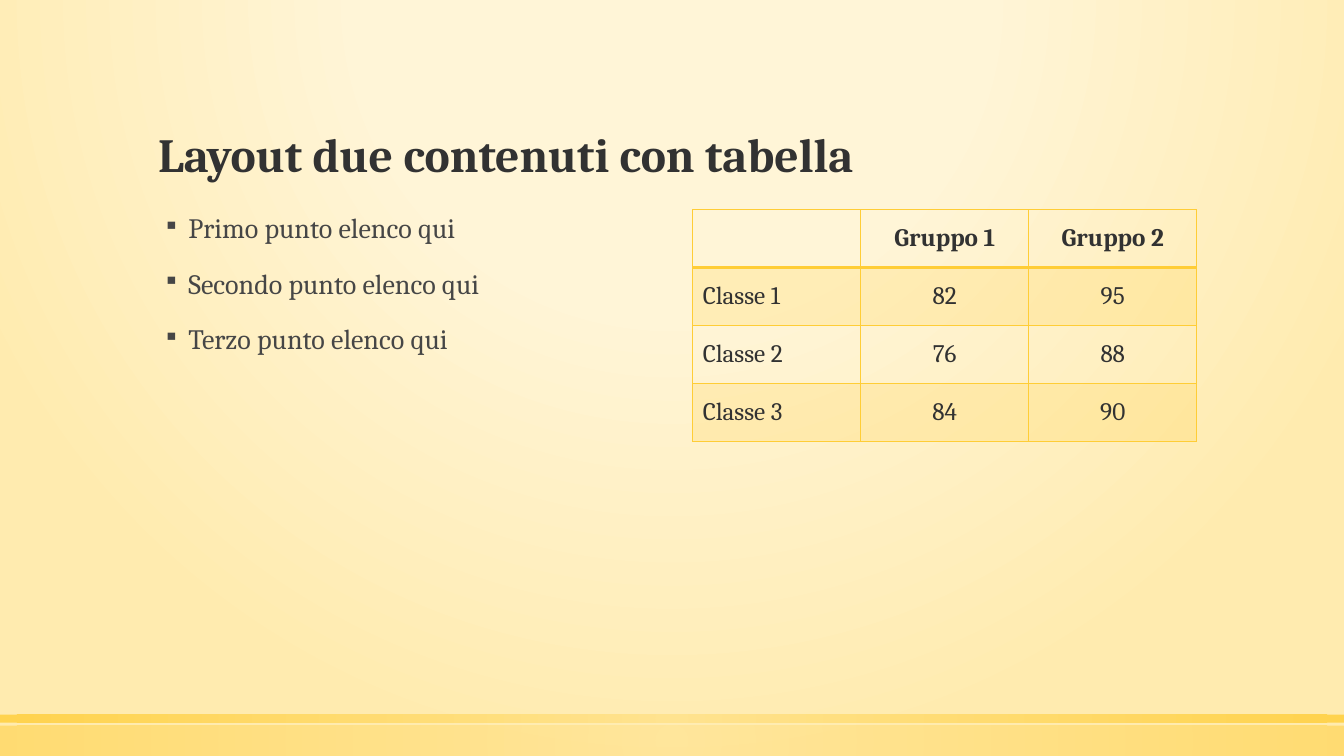
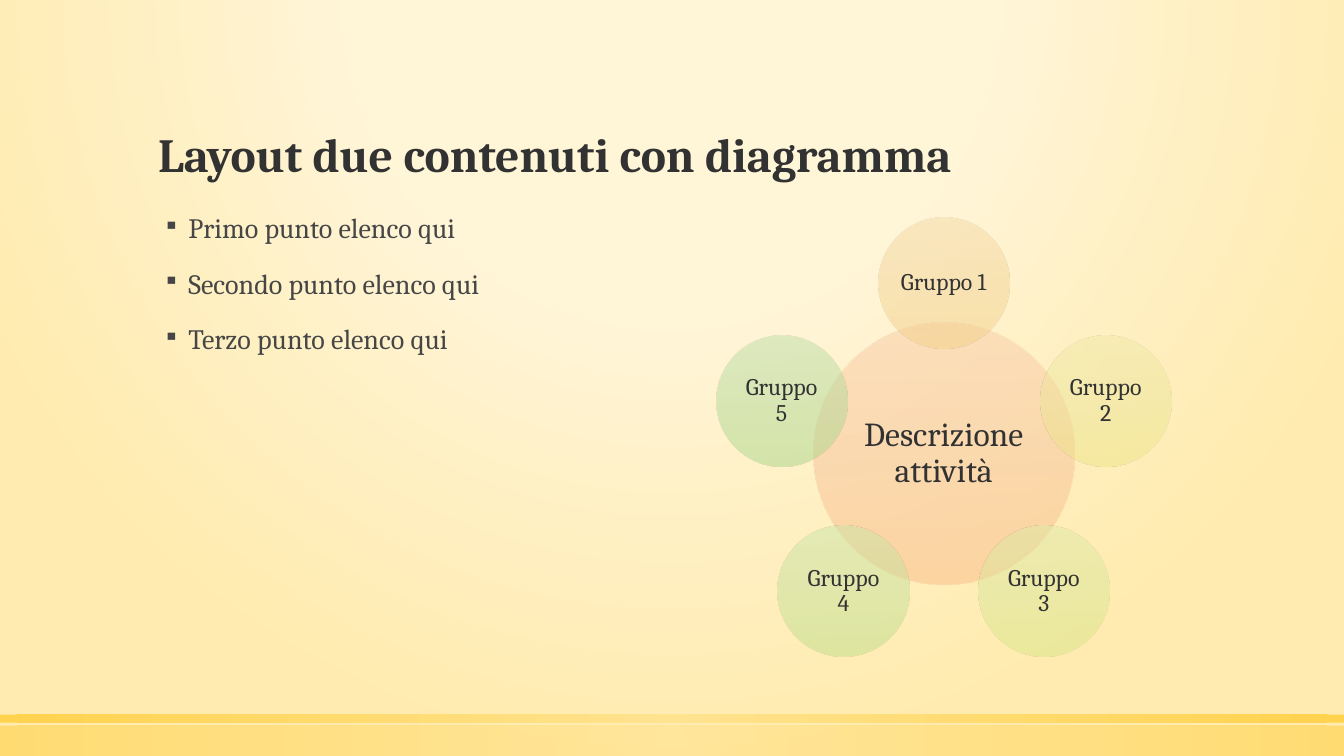
import math

import lxml.etree
import pptx
import pptx.dml.color
import pptx.enum.shapes
import pptx.enum.text
import pptx.oxml
import pptx.oxml.ns
import pptx.util

Inches = pptx.util.Inches
Pt = pptx.util.Pt
qn = pptx.oxml.ns.qn
ALIGN = pptx.enum.text.PP_ALIGN
ANCHOR = pptx.enum.text.MSO_ANCHOR
SHAPE = pptx.enum.shapes.MSO_SHAPE

# Shared style
FONT = "Cambria"
DARK, GREY, GOLD, LIGHT_GOLD = "323232", "464646", "FFCD36", "FFE186"
SLIDE_W, SLIDE_H = 13.33, 7.5
LEFT, BODY_TOP, COLUMN_W = 1.47, 2.08, 5
BULLETS = ["Primo punto elenco qui", "Secondo punto elenco qui", "Terzo punto elenco qui"]

# Slide content
TABLE_ROWS = [
    ["", "Gruppo 1", "Gruppo 2"],
    ["Classe 1", "82", "95"],
    ["Classe 2", "76", "88"],
    ["Classe 3", "84", "90"],
]
HUB_COLORS = ["FACDA9", "F8C39A", "FBBB87"]
GROUP_COLORS = [
    ["F6DBA8", "F3D49A", "F5D187"],
    ["F1EAA8", "EDE59A", "EEE587"],
    ["E0EBA8", "DAE79A", "D8E787"],
    ["CDE6A8", "C5E19A", "BEE088"],
    ["BFE0A9", "B4DA9B", "A9D889"],
]


def rgb(color):
    return pptx.dml.color.RGBColor.from_string(color)


def sub(parent, tag, **attrs):
    """Append a child element with the given attributes."""
    child = lxml.etree.SubElement(parent, qn(tag))
    for name, value in attrs.items():
        child.set(name, str(value))
    return child


def add_color(parent, color, alpha=100):
    clr = sub(parent, "a:srgbClr", val=color)
    if alpha < 100:
        sub(clr, "a:alpha", val=alpha * 1000)


def set_gradient(fill, owner, stops, center=None):
    """Stops are (position, colour, alpha); center is l, t, r, b of a circular gradient."""
    fill.solid()
    solid = next(owner.iter(qn("a:solidFill")))
    grad = pptx.oxml.parse_xml(
        f'<a:gradFill {pptx.oxml.ns.nsdecls("a")} rotWithShape="1"/>')
    stop_list = sub(grad, "a:gsLst")
    for pos, color, alpha in stops:
        add_color(sub(stop_list, "a:gs", pos=pos * 1000), color, alpha)
    if center:
        circle = sub(grad, "a:path", path="circle")
        sub(circle, "a:fillToRect", **{side: v * 1000 for side, v in zip("ltrb", center)})
    else:
        sub(grad, "a:lin", ang=5400000, scaled=0)
    solid.getparent().replace(solid, grad)


def write(tf, lines, size=18, color=DARK, bold=False, align=ALIGN.LEFT,
          anchor=ANCHOR.TOP, spacing=None, before=None, bullet=None, inset=None):
    tf.word_wrap = True
    tf.vertical_anchor = anchor
    if inset is not None:
        tf.margin_left = tf.margin_right = tf.margin_top = tf.margin_bottom = Inches(inset)
    for i, line in enumerate(lines):
        p = tf.paragraphs[0] if i == 0 else tf.add_paragraph()
        p.alignment = align
        p.line_spacing = spacing
        if before is not None:
            p.space_before = Pt(before)
        if bullet:
            pPr = p._p.get_or_add_pPr()
            pPr.set("marL", str(Inches(0.3)))
            pPr.set("indent", str(Inches(-0.25)))
            sub(pPr, "a:buSzPct", val=80000)
            sub(pPr, "a:buChar", char=bullet)
        r = p.add_run()
        r.text = line
        r.font.name = FONT
        r.font.size = Pt(size)
        r.font.bold = bold
        r.font.color.rgb = rgb(color)


def add_textbox(slide, left, top, width, height, lines, **style):
    sp = slide.shapes.add_textbox(Inches(left), Inches(top), Inches(width), Inches(height))
    write(sp.text_frame, lines, **style)


def add_shape(slide, kind, left, top, width, height, stops, center=None):
    sp = slide.shapes.add_shape(kind, Inches(left), Inches(top), Inches(width), Inches(height))
    sp.shadow.inherit = False
    sp.line.fill.background()
    set_gradient(sp.fill, sp._element, stops, center)
    return sp


def add_slide(prs, title):
    """New slide with the bottom bands, the title and the bullet list."""
    slide = prs.slides.add_slide(prs.slide_layouts[6])
    for top, height, alpha in [(7.2, 0.3, 50), (7.09, 0.08, 80)]:
        add_shape(slide, SHAPE.RECTANGLE, 0, top, SLIDE_W, height,
                  [(0, LIGHT_GOLD, alpha), (100, GOLD, alpha)], center=(50, 50, 50, 50))
    add_textbox(slide, LEFT, 0.51, 10.4, 1.35, [title], size=34, bold=True,
                anchor=ANCHOR.BOTTOM, spacing=0.9)
    add_textbox(slide, LEFT, BODY_TOP, COLUMN_W, 4.51, BULLETS, size=20, color=GREY,
                spacing=0.9, before=18, bullet="▪")
    return slide


def style_cell(cell, shaded, top, bottom):
    tcPr = cell._tc.get_or_add_tcPr()
    for side, width in [("L", 1), ("R", 1), ("T", top), ("B", bottom)]:
        ln = sub(tcPr, "a:ln" + side, w=Pt(width))
        add_color(sub(ln, "a:solidFill"), GOLD)
    if shaded:
        add_color(sub(tcPr, "a:solidFill"), GOLD, 20)
    else:
        cell.fill.background()


def add_table(slide, rows, left, top, width, height):
    table = slide.shapes.add_table(len(rows), len(rows[0]), Inches(left), Inches(top),
                                   Inches(width), Inches(height)).table
    table.first_row = table.horz_banding = False
    for i, row in enumerate(rows):
        for j, text in enumerate(row):
            cell = table.cell(i, j)
            style_cell(cell, shaded=i % 2 == 1, top=2 if i == 1 else 1,
                       bottom=2 if i == 0 else 1)
            if text:
                write(cell.text_frame, [text], bold=i == 0,
                      align=ALIGN.CENTER if j else ALIGN.LEFT)
            cell.vertical_anchor = ANCHOR.MIDDLE


def add_circle(slide, cx, cy, diameter, colors, text, size, inset):
    stops = [(pos, color, 50) for pos, color in zip((0, 50, 100), colors)]
    sp = add_shape(slide, SHAPE.OVAL, cx - diameter / 2, cy - diameter / 2,
                   diameter, diameter, stops)
    write(sp.text_frame, [text], size=size, align=ALIGN.CENTER, anchor=ANCHOR.MIDDLE,
          spacing=0.9, inset=inset)


def add_radial_diagram(slide, cx, cy, orbit):
    add_circle(slide, cx, cy, 2.59, HUB_COLORS, "Descrizione attività", 24, 0.03)
    for i, colors in enumerate(GROUP_COLORS):
        angle = 2 * math.pi * i / len(GROUP_COLORS)
        # Only the top label stays on one line
        add_circle(slide, cx + orbit * math.sin(angle), cy - orbit * math.cos(angle),
                   1.3, colors, f"Gruppo {i + 1}", 17, inset=0.04 if i else 0.02)


def main():
    prs = pptx.Presentation()
    prs.slide_width = Inches(SLIDE_W)
    prs.slide_height = Inches(SLIDE_H)

    # Background shared by all slides
    master = prs.slide_master
    set_gradient(master.background.fill, master.element,
                 [(0, "FFF5D7", 59), (40, "FFF5D7", 66), (100, "FFEBAF", 100)],
                 center=(50, -80, 50, 180))

    # Table slide
    slide = add_slide(prs, "Layout due contenuti con tabella")
    add_table(slide, TABLE_ROWS, 6.87, BODY_TOP, COLUMN_W, 2.3)

    # Diagram slide
    slide = add_slide(prs, "Layout due contenuti con diagramma")
    add_radial_diagram(slide, 9.36, 4.5, 1.69)

    prs.save("out.pptx")


if __name__ == "__main__":
    main()
